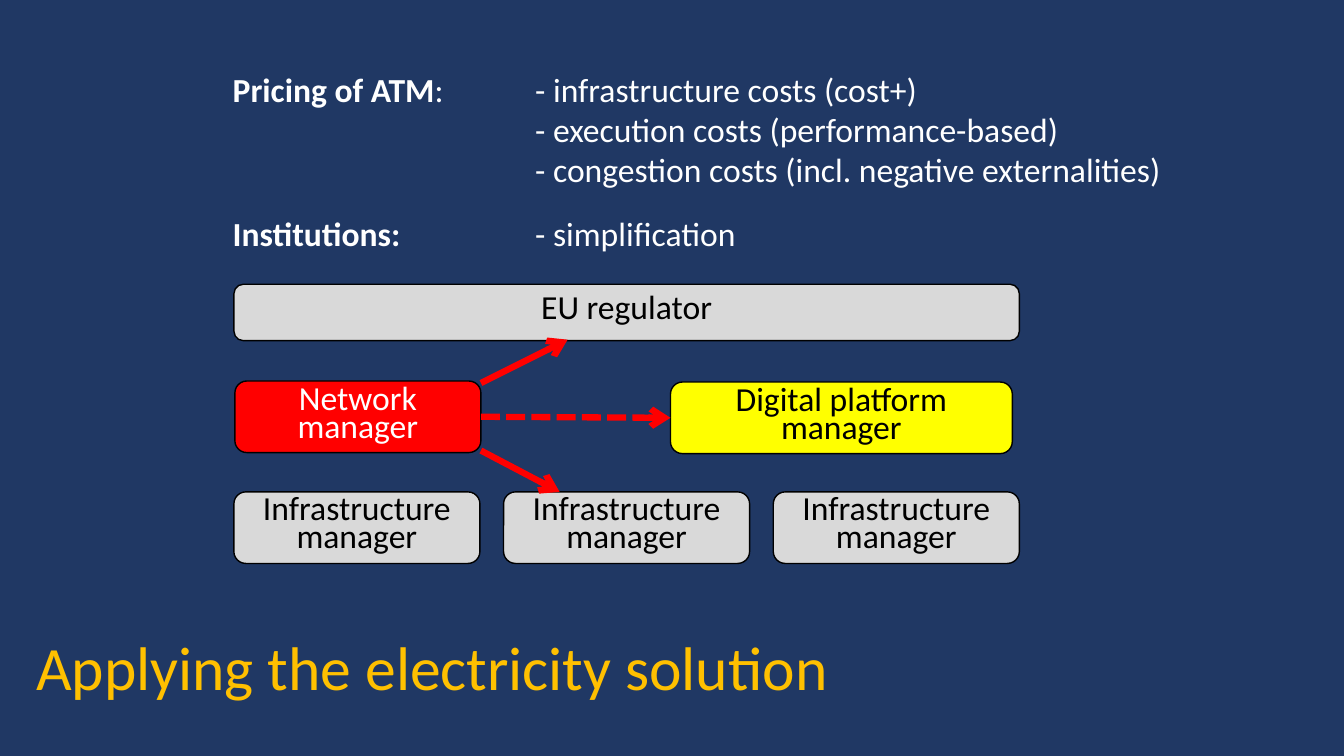
from dataclasses import dataclass

from lxml.etree import SubElement
from pptx import Presentation
from pptx.dml.color import RGBColor
from pptx.enum.dml import MSO_LINE
from pptx.enum.shapes import MSO_CONNECTOR, MSO_SHAPE
from pptx.enum.text import MSO_ANCHOR, MSO_AUTO_SIZE, PP_ALIGN
from pptx.oxml.ns import qn
from pptx.util import Inches, Pt


@dataclass(frozen=True)
class Theme:
    font: str = "Calibri"
    head: int = 44
    body: int = 24
    navy: str = "203864"
    gold: str = "FFC000"
    white: str = "FFFFFF"
    black: str = "000000"
    grey: str = "D9D9D9"
    red: str = "FF0000"
    yellow: str = "FFFF00"


def apply(target, values):
    for name, value in values.items():
        setattr(target, name, value)


class Deck:
    def __init__(self, theme):
        self.theme = theme
        self.file = Presentation()
        apply(self.file, {"slide_width": Inches(13.33), "slide_height": Inches(7.5)})
        self.slide = self.file.slides.add_slide(self.file.slide_layouts[5])
        self.paint(self.slide.background.fill, theme.navy)

    def paint(self, fill, color):
        fill.solid()
        fill.fore_color.rgb = RGBColor.from_string(color)

    def label(self, para, text, color, size=None, bold=False):
        run = para.add_run()
        run.text = text
        size = size or self.theme.body
        apply(run.font, {"name": self.theme.font, "size": Pt(size), "bold": bold})
        run.font.color.rgb = RGBColor.from_string(color)

    def title(self, text, left, top, width, height):
        shape = self.slide.shapes.title
        apply(shape, {"left": Inches(left), "top": Inches(top),
                      "width": Inches(width), "height": Inches(height)})
        frame = shape.text_frame
        apply(frame, {"vertical_anchor": MSO_ANCHOR.MIDDLE, "word_wrap": True,
                      "auto_size": MSO_AUTO_SIZE.NONE})
        para = frame.paragraphs[0]
        apply(para, {"alignment": PP_ALIGN.LEFT, "line_spacing": 0.9})
        self.label(para, text, self.theme.gold, self.theme.head)

    def points(self, topic, colon, items, left, top, width, height, tab=3):
        """Bold topic, with its items lined up at the tab."""
        box = self.slide.shapes.add_textbox(
            Inches(left), Inches(top), Inches(width), Inches(height))
        frame = box.text_frame
        frame.word_wrap = True
        for i, item in enumerate(items):
            para = frame.add_paragraph() if i else frame.paragraphs[0]
            props = para._p.get_or_add_pPr()
            if i:
                props.set("marL", str(Inches(tab)))
            else:
                stops = SubElement(props, qn("a:tabLst"))
                SubElement(stops, qn("a:tab"), pos=str(Inches(tab)), algn="l")
                self.label(para, topic, self.theme.white, bold=True)
                item = f"{colon}\t{item}"
            self.label(para, item, self.theme.white)

    def box(self, lines, left, top, width, height, fill, color):
        shape = self.slide.shapes.add_shape(
            MSO_SHAPE.ROUNDED_RECTANGLE,
            Inches(left), Inches(top), Inches(width), Inches(height))
        shape.shadow.inherit = False
        self.paint(shape.fill, fill)
        self.paint(shape.line.fill, self.theme.black)
        shape.line.width = Pt(1)
        frame = shape.text_frame
        apply(frame, {"vertical_anchor": MSO_ANCHOR.MIDDLE, "word_wrap": True})
        for i, line in enumerate(lines):
            para = frame.add_paragraph() if i else frame.paragraphs[0]
            apply(para, {"alignment": PP_ALIGN.CENTER, "line_spacing": Pt(20)})
            self.label(para, line, color)
        return shape

    def arrow(self, start, end, dash=None):
        link = self.slide.shapes.add_connector(
            MSO_CONNECTOR.STRAIGHT, *map(Inches, start + end))
        self.paint(link.line.fill, self.theme.red)
        apply(link.line, {"width": Pt(4.5), "dash_style": dash})
        props = link._element.spPr
        SubElement(props.find(qn("a:ln")), qn("a:tailEnd"), type="arrow")
        SubElement(props, qn("a:effectLst"))
        return link


def main():
    theme = Theme()
    deck = Deck(theme)
    deck.title("Applying the electricity solution", 0.26, 6.04, 12.91, 1.23)

    # Pricing and institutions
    costs = ["- infrastructure costs (cost+)",
             "- execution costs (performance-based)",
             "- congestion costs (incl. negative externalities)"]
    deck.points("Pricing of ATM", ":", costs, 2.21, 0.63, 10.04, 1.31)
    deck.points("Institutions:", "", ["- simplification"], 2.21, 2.06, 8.74, 0.5)

    # Infrastructure managers, evenly spaced under the regulator
    left, span, wide, high = 2.32, 7.79, 2.44, 0.71
    step = (span - wide) / 2
    for i in range(3):
        deck.box(["Infrastructure", "manager"], left + i * step, 4.88, wide, high,
                 theme.grey, theme.black)
    deck.box(["EU regulator"], left, 2.82, span, 0.56, theme.grey, theme.black)

    # Network manager and digital platform
    network = deck.box(["Network", "manager"], 2.33, 3.78, wide, high,
                       theme.red, theme.white)
    digital = deck.box(["Digital platform manager"], 6.65, 3.79, 3.39, high,
                       theme.yellow, theme.black)

    # Arrows from the network manager
    deck.arrow((4.77, 3.8), (5.63, 3.37))
    deck.arrow((4.77, 4.47), (5.55, 4.88))
    link = deck.arrow((4.77, 4.13), (6.65, 4.14), MSO_LINE.SQUARE_DOT)
    link.begin_connect(network, 3)
    link.end_connect(digital, 1)

    deck.file.save("out.pptx")


if __name__ == "__main__":
    main()
